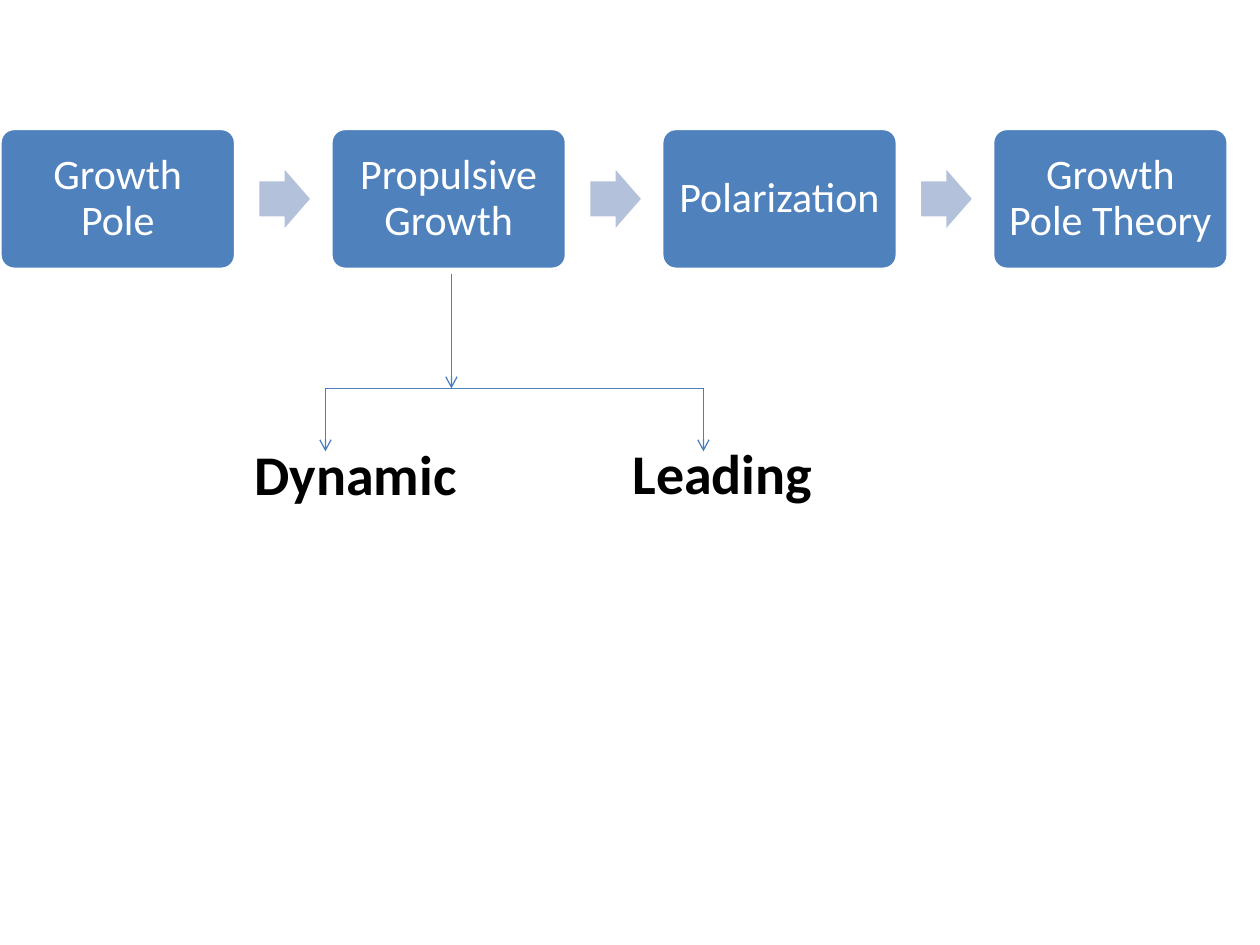
from dataclasses import dataclass

from lxml.etree import SubElement
from pptx import Presentation
from pptx.dml.color import RGBColor
from pptx.enum.shapes import MSO_CONNECTOR, MSO_SHAPE
from pptx.enum.text import MSO_ANCHOR, PP_ALIGN
from pptx.oxml.ns import qn
from pptx.util import Cm, Pt


@dataclass(frozen=True)
class Theme:
    font: str = "Calibri"
    box: str = "4F81BD"
    box_text: str = "FFFFFF"
    arrow: str = "B3C1DB"
    line: str = "4B7EBC"
    text: str = "000000"
    box_size: int = 24
    label_size: int = 32


THEME = Theme()

# Process row, in cm
STEPS = ["Growth Pole", "Propulsive Growth", "Polarization", "Growth Pole Theory"]
ROW_TOP, PITCH = 2.59, 6.67
BOX_W, BOX_H = 4.75, 2.84
ARROW_X, ARROW_W, ARROW_H = 5.23, 1.02, 1.17

# Branches below the second step, in cm: label, line x, label left, label top
BRANCHES = [("Dynamic", 6.56, 4.88, 8.74), ("Leading", 14.18, 12.5, 8.71)]
STEM_X, STEM_TOP, FORK_Y, BRANCH_END = 9.1, 5.52, 7.83, 9.1


def color(value):
    return RGBColor.from_string(value)


def write(tf, text, *, size, fill, bold=False, align=PP_ALIGN.LEFT, spacing=1.0):
    tf.word_wrap = True
    p = tf.paragraphs[0]
    p.alignment, p.line_spacing = align, spacing
    r = p.add_run()
    r.text = text
    r.font.name, r.font.size, r.font.bold = THEME.font, Pt(size), bold
    r.font.color.rgb = color(fill)


def add_block(s, kind, x, y, w, h, fill, adjustments):
    sp = s.shapes.add_shape(kind, Cm(x), Cm(y), Cm(w), Cm(h))
    sp.shadow.inherit = False
    sp.fill.solid()
    sp.fill.fore_color.rgb = color(fill)
    sp.line.fill.background()
    for i, value in enumerate(adjustments):
        sp.adjustments[i] = value
    return sp


def add_step(s, text, x):
    sp = add_block(s, MSO_SHAPE.ROUNDED_RECTANGLE, x, ROW_TOP, BOX_W, BOX_H,
                   THEME.box, [0.1])
    sp.line.color.rgb = color(THEME.box_text)
    sp.line.width = Pt(2)
    tf = sp.text_frame
    tf.vertical_anchor = MSO_ANCHOR.MIDDLE
    tf.margin_left = tf.margin_right = tf.margin_top = tf.margin_bottom = Cm(0.25)
    write(tf, text, size=THEME.box_size, fill=THEME.box_text,
          align=PP_ALIGN.CENTER, spacing=0.9)


def add_step_arrow(s, x):
    add_block(s, MSO_SHAPE.RIGHT_ARROW, x, ROW_TOP + (BOX_H - ARROW_H) / 2,
              ARROW_W, ARROW_H, THEME.arrow, [0.6, 0.5])


def add_line(s, x1, y1, x2, y2, arrow=False):
    line = s.shapes.add_connector(MSO_CONNECTOR.STRAIGHT,
                                  Cm(x1), Cm(y1), Cm(x2), Cm(y2))
    line.line.color.rgb = color(THEME.line)
    line.line.width = Pt(0.75)
    if arrow:
        SubElement(line.line._get_or_add_ln(), qn("a:tailEnd"), type="arrow")
    SubElement(line._element.spPr, qn("a:effectLst"))


def add_label(s, text, x, y):
    sp = s.shapes.add_textbox(Cm(x), Cm(y), Cm(6.15), Cm(1.62))
    write(sp.text_frame, text, size=THEME.label_size, fill=THEME.text, bold=True)


def main():
    prs = Presentation()
    prs.slide_width, prs.slide_height = Cm(25.4), Cm(19.05)
    s = prs.slides.add_slide(prs.slide_layouts[6])

    # Process row
    for i, text in enumerate(STEPS):
        add_step(s, text, i * PITCH)
        if i < len(STEPS) - 1:
            add_step_arrow(s, i * PITCH + ARROW_X)

    # Fork from the second step
    add_line(s, BRANCHES[0][1], FORK_Y, BRANCHES[-1][1], FORK_Y)
    add_line(s, STEM_X, STEM_TOP, STEM_X, FORK_Y, arrow=True)
    for text, x, left, top in BRANCHES:
        add_line(s, x, FORK_Y, x, BRANCH_END, arrow=True)
        add_label(s, text, left, top)

    prs.save("out.pptx")


if __name__ == "__main__":
    main()
